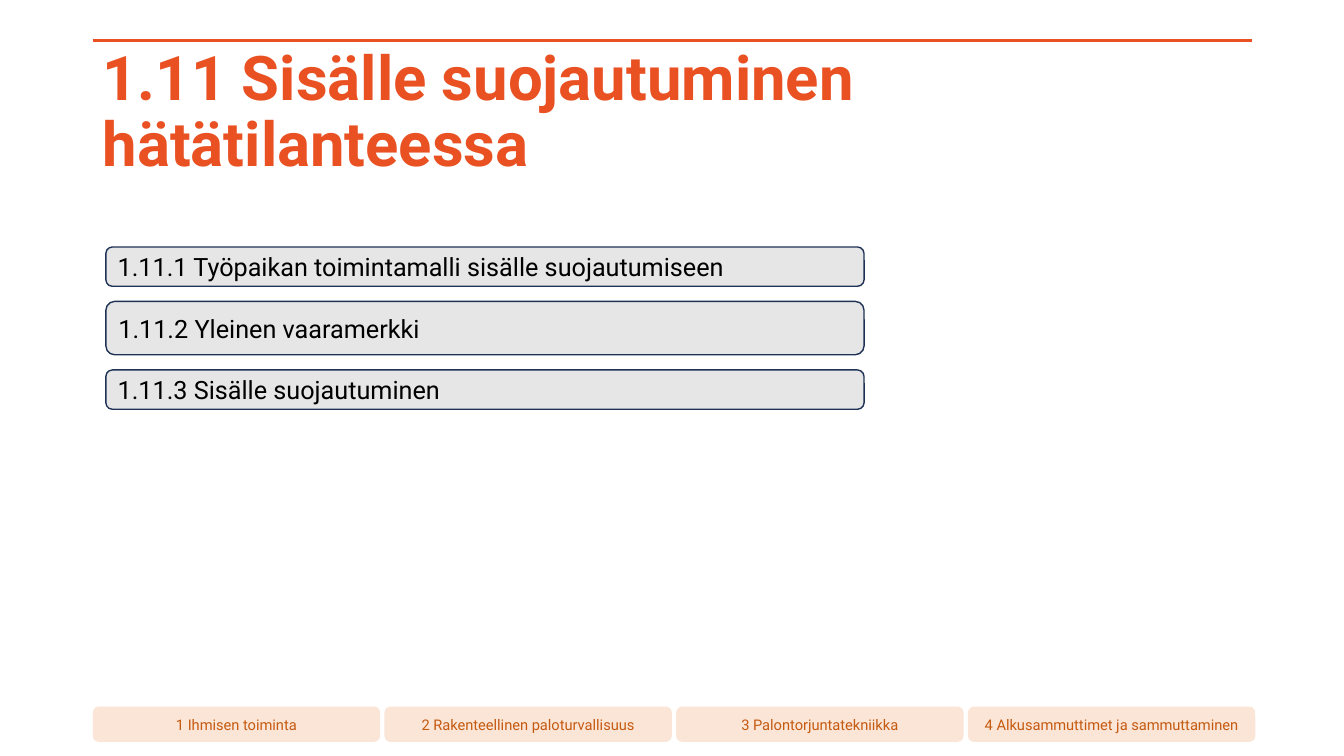
from lxml import etree
from pptx import Presentation
from pptx.dml.color import RGBColor
from pptx.enum.shapes import MSO_CONNECTOR, MSO_SHAPE
from pptx.enum.text import MSO_ANCHOR, PP_ALIGN
from pptx.oxml.ns import qn
from pptx.util import Pt

PX = 9144  # EMU per px, 100 px to the inch
FONT = "Roboto"
ORANGE = "E95123"
STRAIGHT = MSO_CONNECTOR.STRAIGHT
ROUNDED = MSO_SHAPE.ROUNDED_RECTANGLE
MIDDLE = MSO_ANCHOR.MIDDLE
LEFT, CENTER = PP_ALIGN.LEFT, PP_ALIGN.CENTER

TITLE = "1.11 Sisälle suojautuminen hätätilanteessa"
TOPICS = [
    ("1.11.1 Työpaikan toimintamalli sisälle suojautumiseen", 39),
    ("1.11.2 Yleinen vaaramerkki", 53),
    ("1.11.3 Sisälle suojautuminen", 39),
]
CHAPTERS = [
    "1 Ihmisen toiminta",
    "2 Rakenteellinen paloturvallisuus",
    "3 Palontorjuntatekniikka",
    "4 Alkusammuttimet ja sammuttaminen",
]


def emu(*lengths):
    return [round(length * PX) for length in lengths]


def color(hex_code):
    return RGBColor.from_string(hex_code)


def write_text(shape, text, size, ink, bold=False, align=LEFT, spacing=1.0):
    frame = shape.text_frame
    frame.word_wrap = True
    frame.vertical_anchor = MIDDLE
    para = frame.paragraphs[0]
    para.alignment = align
    para.line_spacing = spacing
    span = para.add_run()
    span.text = text
    span.font.name = FONT
    span.font.size = Pt(size)
    span.font.bold = bold
    span.font.color.rgb = color(ink)


def add_button(page, box, fill, outline=None):
    button = page.shapes.add_shape(ROUNDED, *emu(*box))
    button.shadow.inherit = False
    button.fill.solid()
    button.fill.fore_color.rgb = color(fill)
    if outline:
        button.line.color.rgb = color(outline)
        button.line.width = Pt(1)
    else:
        button.line.fill.background()
    return button


def add_header(page, left, top, width, height):
    # Rule along the top edge
    rule = page.shapes.add_connector(STRAIGHT, *emu(left, top, left + width, top))
    rule.line.color.rgb = color(ORANGE)
    rule.line.width = Pt(2.5)
    etree.SubElement(rule._element.spPr, qn("a:effectLst"))
    # Title below it
    title = page.shapes.add_textbox(*emu(left, top, width, height))
    write_text(title, TITLE, size=44, ink=ORANGE, bold=True, spacing=0.9)


def add_topics(page, left, top, width, gap):
    for topic, height in TOPICS:
        button = add_button(page, (left, top, width, height), "E7E6E6", "1E3256")
        write_text(button, topic, size=18, ink="000000")
        top += height + gap


def add_chapter_bar(page, left, top, width, height, button_width):
    step = (width - button_width) / (len(CHAPTERS) - 1)
    for index, chapter in enumerate(CHAPTERS):
        box = (left + index * step, top, button_width, height)
        button = add_button(page, box, "FBE5D6")
        write_text(button, chapter, size=10.5, ink="C55A11", align=CENTER)


def main():
    deck = Presentation()
    deck.slide_width, deck.slide_height = emu(1333, 750)
    page = deck.slides.add_slide(deck.slide_layouts[6])
    add_chapter_bar(page, 92, 701, 1153, 35, button_width=285)
    add_header(page, 92, 40, 1150, 145)
    add_topics(page, 105, 245, 752, gap=15)
    deck.save("out.pptx")


if __name__ == "__main__":
    main()
